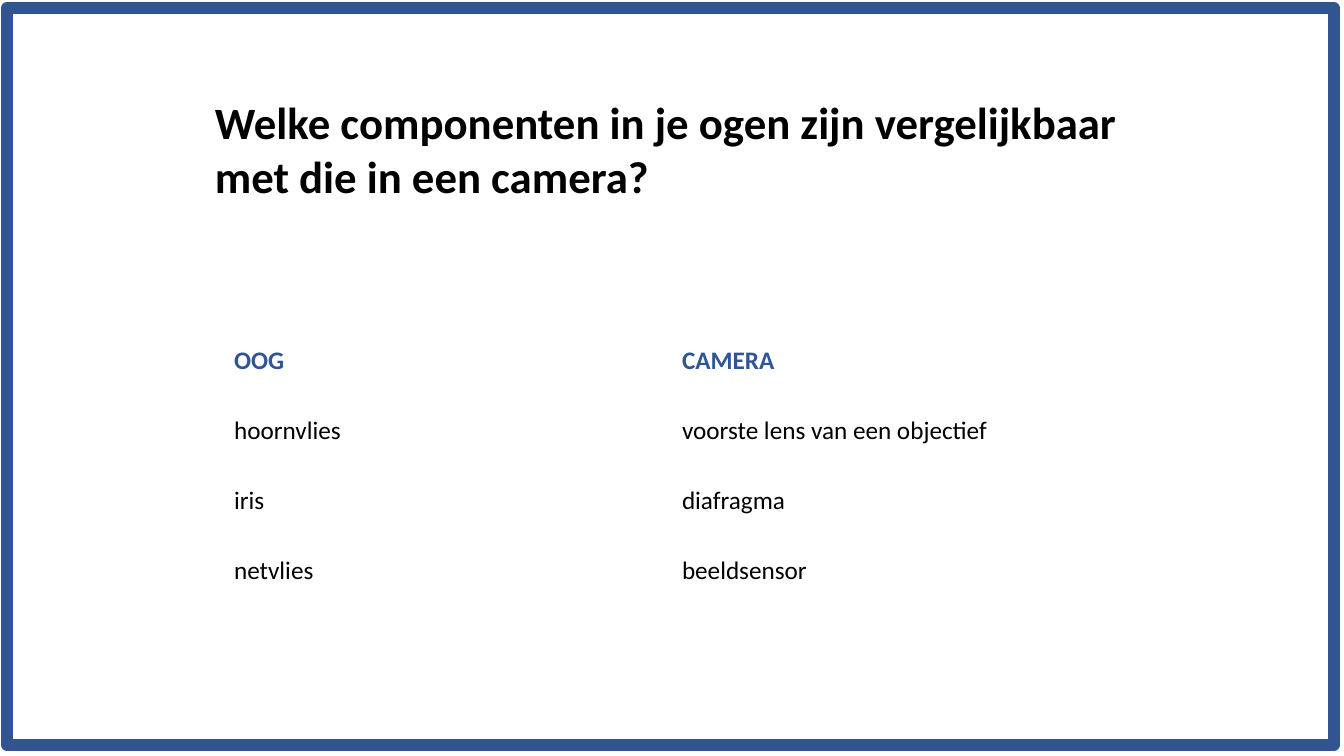
from pptx import Presentation
from pptx import util as u
from pptx.dml.color import RGBColor
from pptx.enum import shapes, text

PX = 914400 / 100.8
COLORS = {"paper": "FFFFFF", "frame": "325491", "heading": "2F5597", "ink": "000000"}
TITLE = ["Welke componenten in je ogen zijn vergelijkbaar", "met die in een camera?"]
PAIRS = [
    ("OOG", "CAMERA"),
    ("hoornvlies", "voorste lens van een objectief"),
    ("iris", "diafragma"),
    ("netvlies", "beeldsensor"),
]
TITLE_FONT = {"name": "Calibri", "size": u.Pt(32), "bold": True}
HEADING_FONT = {"name": "Calibri", "size": u.Pt(18), "bold": True}
BODY_FONT = {"name": "Calibri", "size": u.Pt(18), "bold": False}


def px(length):
    return u.Emu(round(length * PX))


def color(name):
    return RGBColor.from_string(COLORS[name])


def paint(fill, name):
    fill.solid()
    fill.fore_color.rgb = color(name)


def write(para, words, font, ink):
    span = para.add_run()
    span.text = words
    for key, value in font.items():
        setattr(span.font, key, value)
    span.font.color.rgb = color(ink)


def add_frame(page, box):
    frame = page.shapes.add_shape(shapes.MSO_SHAPE.RECTANGLE, *map(px, box))
    frame.shadow.inherit = False
    paint(frame.fill, "paper")
    frame.line.color.rgb = color("frame")
    frame.line.width = u.Pt(8.25)


def add_title(page, box):
    body = page.shapes.add_textbox(*map(px, box)).text_frame
    body.word_wrap = True
    body.vertical_anchor = text.MSO_ANCHOR.TOP
    for index, words in enumerate(TITLE):
        para = body.paragraphs[0] if index == 0 else body.add_paragraph()
        write(para, words, TITLE_FONT, "ink")


def add_comparison(page, box):
    table = page.shapes.add_table(len(PAIRS), len(PAIRS[0]), *map(px, box)).table
    for row, pair in enumerate(PAIRS):
        font, ink = (BODY_FONT, "ink") if row else (HEADING_FONT, "heading")
        for column, words in enumerate(pair):
            cell = table.cell(row, column)
            paint(cell.fill, "paper")
            write(cell.text_frame.paragraphs[0], words, font, ink)


def main():
    deck = Presentation()
    deck.slide_width, deck.slide_height = px(1344), px(756)
    page = deck.slides.add_slide(deck.slide_layouts[6])
    paint(page.background.fill, "paper")
    add_frame(page, (7, 8, 1327, 737))
    add_title(page, (205, 90, 1038, 377))
    add_comparison(page, (224, 340, 896, 281))
    deck.save("out.pptx")


if __name__ == "__main__":
    main()
